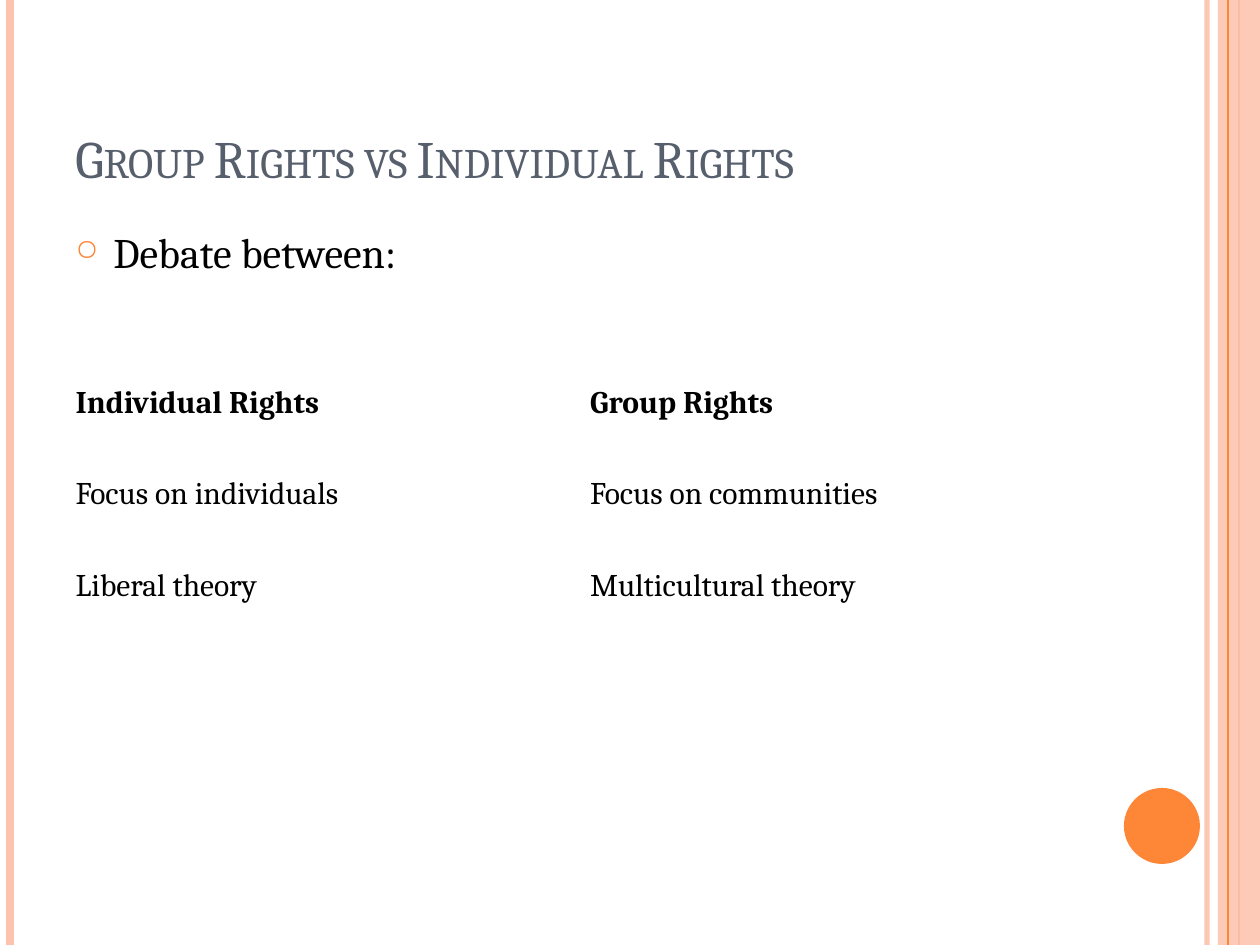
from lxml.etree import SubElement
from pptx import Presentation
from pptx.dml.color import RGBColor
from pptx.enum.shapes import MSO_CONNECTOR, MSO_SHAPE
from pptx.enum.text import MSO_ANCHOR
from pptx.oxml.ns import qn
from pptx.util import Pt

PX = 914400 / 126
WIDE, HIGH = 1260, 945
LEFT, SPAN = 63, 1029
FONT = "Cambria"
PEACH = RGBColor(0xFE, 0xC3, 0xAE)
ORANGE = RGBColor(0xFE, 0x86, 0x37)
SLATE = RGBColor(0x57, 0x5F, 0x6D)
BLACK = RGBColor(0, 0, 0)

TITLE = "Group Rights vs Individual Rights"
LEAD = "Debate between:"
ROWS = [
    ("Individual Rights", "Group Rights"),
    ("Focus on individuals", "Focus on communities"),
    ("Liberal theory", "Multicultural theory"),
]
BACK = [(1207, PEACH, 3, 93), (10, PEACH, 4.5, 100), (1239, ORANGE, 1.5, 100)]
FRONT = [(1228, ORANGE, 0.75, 100)]
BAND = (MSO_SHAPE.RECTANGLE, (1218, 0, 42, HIGH), PEACH, 87)
DISC = (MSO_SHAPE.OVAL, (1124, 788, 76, 76), ORANGE, 100)


def emu(*vals):
    return [round(v * PX) for v in vals]


def fade(part, alpha):
    if alpha < 100:
        color = next(part.iter(qn("a:srgbClr")))
        SubElement(color, qn("a:alpha"), val=str(alpha * 1000))


def stripe(slide, x, color, width, alpha):
    rule = slide.shapes.add_connector(MSO_CONNECTOR.STRAIGHT, *emu(x, 0, x, HIGH))
    rule.line.color.rgb = color
    rule.line.width = Pt(width)
    props = rule._element.spPr
    fade(props, alpha)
    SubElement(props, qn("a:effectLst"))


def solid(slide, kind, box, color, alpha):
    shape = slide.shapes.add_shape(kind, *emu(*box))
    shape.shadow.inherit = False
    shape.fill.solid()
    shape.fill.fore_color.rgb = color
    shape.line.fill.background()
    fade(shape._element.spPr, alpha)


def style(para, size, color, bold=False):
    for run in para.runs:
        font = run.font
        font.name, font.size, font.bold = FONT, Pt(size), bold
        font.color.rgb = color


def write(slide, top, high, text, size, color, anchor):
    frame = slide.shapes.add_textbox(*emu(LEFT, top, SPAN, high)).text_frame
    frame.word_wrap = True
    frame.vertical_anchor = anchor
    frame.text = text
    para = frame.paragraphs[0]
    style(para, size, color)
    return para


def bullet(para):
    props = para._p.get_or_add_pPr()
    indent = emu(38)[0]
    props.set("marL", str(indent))
    props.set("indent", str(-indent))
    tint = SubElement(props, qn("a:buClr"))
    SubElement(tint, qn("a:srgbClr"), val=str(ORANGE))
    SubElement(props, qn("a:buSzPct"), val="70000")
    SubElement(props, qn("a:buChar"), char="○")


def grid(slide):
    box = emu(LEFT, 357, SPAN, 275)
    table = slide.shapes.add_table(len(ROWS), len(ROWS[0]), *box).table
    table.first_row = table.horz_banding = False
    for r, row in enumerate(ROWS):
        for c, text in enumerate(row):
            cell = table.cell(r, c)
            cell.fill.background()
            cell.vertical_anchor = MSO_ANCHOR.MIDDLE
            cell.text = text
            style(cell.text_frame.paragraphs[0], 18, BLACK, r == 0)


def main():
    """Build the slide on group and individual rights."""
    deck = Presentation()
    deck.slide_width, deck.slide_height = emu(WIDE, HIGH)
    slide = deck.slides.add_slide(deck.slide_layouts[6])
    for item in BACK:
        stripe(slide, *item)
    solid(slide, *BAND)
    for item in FRONT:
        stripe(slide, *item)
    solid(slide, *DISC)
    title = write(slide, 38, 157, TITLE, 30, SLATE, MSO_ANCHOR.BOTTOM)
    title.runs[0]._r.get_or_add_rPr().set("cap", "small")
    bullet(write(slide, 220, 672, LEAD, 24, BLACK, MSO_ANCHOR.TOP))
    grid(slide)
    deck.save("out.pptx")


if __name__ == "__main__":
    main()
